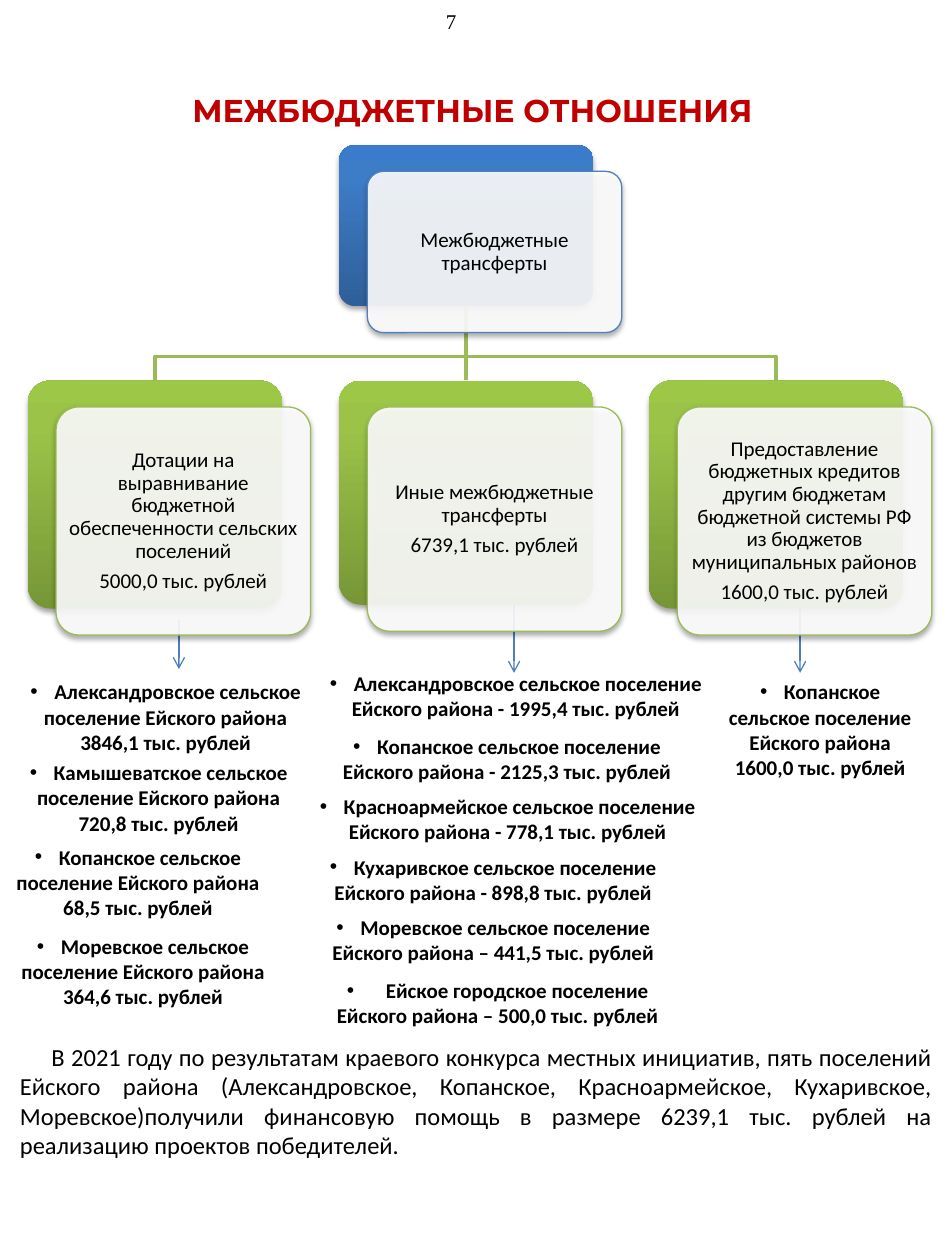
from lxml import etree
from pptx import Presentation
from pptx.dml.color import RGBColor
from pptx.enum.shapes import MSO_CONNECTOR, MSO_SHAPE
from pptx.enum.text import MSO_ANCHOR, MSO_AUTO_SIZE, PP_ALIGN
from pptx.oxml import parse_xml
from pptx.oxml.ns import nsdecls, qn
from pptx.util import Inches, Pt

COLORS = {
    "black": "000000", "white": "FFFFFF", "title": "C00000", "arrow": "4B7EBC",
    "blue": "4F81BD", "green": "9BBB59",
}
GRADIENTS = {
    "blue": ((0, "2F5F99"), (80, "3D7CC7"), (100, "3A7CCB")),
    "green": ((0, "779737"), (80, "9BC348"), (100, "9DC746")),
}
CARD_WIDTH = 2.02
ROW_TOP = 3.02
ROOT = (2.69, 1.15, 1.28, "blue", ["Межбюджетные трансферты"])
BRANCHES = [
    (0.22, ROW_TOP, 1.81, "green",
     ["Дотации на выравнивание бюджетной обеспеченности сельских поселений",
      "5000,0 тыс. рублей"]),
    (2.69, ROW_TOP, 1.78, "green",
     ["Иные межбюджетные трансферты", "6739,1 тыс. рублей"]),
    (5.15, ROW_TOP, 1.81, "green",
     ["Предоставление бюджетных кредитов другим бюджетам бюджетной системы РФ "
      "из бюджетов муниципальных районов", "1600,0 тыс. рублей"]),
]
ARROWS = [(4.08, 4.79, 5.34), (1.42, 4.92, 5.31), (6.35, 4.42, 5.34)]
DISTRICT = "Ейского района"
SETTLEMENT = "поселение Ейского района"
RECIPIENTS = [
    (5.64, 5.34, 1.74, False, 0.19,
     ["Копанское", "сельское поселение", DISTRICT, "1600,0 тыс. рублей"]),
    (-0.05, 5.34, 2.73, True, 0.19,
     ["Александровское сельское", SETTLEMENT, "3846,1 тыс. рублей"]),
    (0.13, 5.98, 2.26, False, 0.19,
     ["Камышеватское сельское", SETTLEMENT, "720,8 тыс. рублей"]),
    (0.02, 6.65, 2.15, False, 0.19,
     ["Копанское сельское", SETTLEMENT, "68,5 тыс. рублей"]),
    (0.04, 7.36, 2.19, False, 0.19,
     ["Моревское сельское", SETTLEMENT, "364,6 тыс. рублей"]),
    (2.22, 5.27, 3.75, True, 0.19,
     ["Александровское сельское поселение", f"{DISTRICT} - 1995,4 тыс. рублей"]),
    (2.15, 5.77, 3.75, True, 0.19,
     ["Копанское сельское поселение", f"{DISTRICT} - 2125,3 тыс. рублей"]),
    (2.41, 6.25, 3.24, False, 0.19,
     ["Красноармейское сельское поселение", f"{DISTRICT} - 778,1 тыс. рублей"]),
    (2.49, 6.73, 2.85, False, 0.19,
     ["Кухаривское сельское поселение", f"{DISTRICT} - 898,8 тыс. рублей"]),
    (2.04, 7.21, 3.75, True, 0.19,
     ["Моревское сельское поселение", f"{DISTRICT} – 441,5 тыс. рублей"]),
    (2.56, 7.71, 2.78, False, 0.31,
     ["Ейское городское поселение", f"{DISTRICT} – 500,0 тыс. рублей"]),
]
SUMMARY = (
    "В 2021 году по результатам краевого конкурса местных инициатив, пять поселений "
    "Ейского района (Александровское, Копанское, Красноармейское, Кухаривское, "
    "Моревское)получили финансовую помощь в размере 6239,1 тыс. рублей на реализацию "
    "проектов победителей."
)


def color(name):
    return RGBColor.from_string(COLORS[name])


def add_text(slide, lines, left, top, width, height, *, size=12, font="Calibri",
             ink="black", bold=False, align=PP_ALIGN.CENTER, wrap=True, bullet=0,
             first_indent=0, card=False):
    box = slide.shapes.add_textbox(*map(Inches, (left, top, width, height)))
    frame = box.text_frame
    frame.word_wrap = wrap
    frame.auto_size = MSO_AUTO_SIZE.NONE if card else MSO_AUTO_SIZE.SHAPE_TO_FIT_TEXT
    if card:
        frame.vertical_anchor = MSO_ANCHOR.MIDDLE
        frame.margin_left = frame.margin_right = Inches(0.05)
        frame.margin_top = frame.margin_bottom = Inches(0.05)
    for index, line in enumerate(lines):
        paragraph = frame.add_paragraph() if index else frame.paragraphs[0]
        paragraph.alignment = align
        if card:
            paragraph.line_spacing = 0.9
            paragraph.space_after = Pt(4.2)
        properties = paragraph._p.get_or_add_pPr()
        if first_indent:
            properties.set("indent", str(Inches(first_indent)))
        if bullet and index == 0:
            properties.set("marL", str(Inches(bullet)))
            properties.set("indent", str(-Inches(bullet)))
            etree.SubElement(properties, qn("a:buFont"), typeface="Arial")
            etree.SubElement(properties, qn("a:buChar"), char="•")
        run = paragraph.add_run()
        run.text = line
        run.font.size = Pt(size)
        run.font.name = font
        run.font.bold = bold
        run.font.color.rgb = color(ink)


def add_plate(slide, left, top, height):
    plate = slide.shapes.add_shape(
        MSO_SHAPE.ROUNDED_RECTANGLE, *map(Inches, (left, top, CARD_WIDTH, height)))
    plate.adjustments[0] = 0.1
    plate.line.fill.background()
    return plate


def add_shadow(shape):
    shape._element.spPr.append(parse_xml(
        f'<a:effectLst {nsdecls("a")}><a:outerShdw blurRad="{Pt(3.1)}" dist="{Pt(1.8)}" '
        f'dir="5400000" rotWithShape="0"><a:srgbClr val="{COLORS["black"]}">'
        '<a:alpha val="35000"/></a:srgbClr></a:outerShdw></a:effectLst>'))


def add_back_plate(slide, left, top, height, theme):
    plate = add_plate(slide, left, top, height)
    stops = "".join(
        f'<a:gs pos="{position * 1000}"><a:srgbClr val="{shade}"/></a:gs>'
        for position, shade in GRADIENTS[theme])
    plate.line._ln.addprevious(parse_xml(
        f'<a:gradFill {nsdecls("a")} rotWithShape="1"><a:gsLst>{stops}</a:gsLst>'
        '<a:lin ang="16200000" scaled="0"/></a:gradFill>'))
    add_shadow(plate)
    return plate


def add_front_plate(slide, left, top, height, theme, lines):
    left, top = left + 0.225, top + 0.21
    plate = add_plate(slide, left, top, height)
    plate.fill.solid()
    plate.fill.fore_color.rgb = color("white")
    fill_color = plate._element.spPr.find(qn("a:solidFill"))[0]
    etree.SubElement(fill_color, qn("a:alpha"), val="90000")
    plate.line.color.rgb = color(theme)
    plate.line.width = Pt(0.75)
    add_shadow(plate)
    add_text(slide, lines, left + 0.05, top + 0.05, CARD_WIDTH - 0.1, height - 0.1, card=True)


def add_line(slide, x, top, bottom, ink, width, arrow=False):
    line = slide.shapes.add_connector(
        MSO_CONNECTOR.STRAIGHT, Inches(x), Inches(top), Inches(x), Inches(bottom))
    line.line.color.rgb = color(ink)
    line.line.width = Pt(width)
    if arrow:
        etree.SubElement(line.line._ln, qn("a:tailEnd"), type="arrow")
    etree.SubElement(line._element.spPr, qn("a:effectLst"))
    return line


def add_elbow(slide, start_x, start_y, end_x, end_y):
    middle = start_y + 0.4
    builder = slide.shapes.build_freeform(Inches(start_x), Inches(start_y))
    builder.add_line_segments(
        [(Inches(x), Inches(y))
         for x, y in ((start_x, middle), (end_x, middle), (end_x, end_y))], close=False)
    elbow = builder.convert_to_shape()
    elbow.shadow.inherit = False
    elbow.fill.background()
    elbow.line.color.rgb = color("green")
    elbow.line.width = Pt(2)


def add_tree(slide):
    cards = [ROOT, *BRANCHES]
    plates = [add_back_plate(slide, *card[:4]) for card in cards]
    root_x, root_bottom = ROOT[0] + CARD_WIDTH / 2, ROOT[1] + ROOT[2]
    for branch, plate in zip(BRANCHES, plates[1:]):
        branch_x = branch[0] + CARD_WIDTH / 2
        if branch_x == root_x:
            trunk = add_line(slide, root_x, root_bottom, ROW_TOP, "green", 2)
            trunk.begin_connect(plates[0], 2)
            trunk.end_connect(plate, 0)
        else:
            add_elbow(slide, root_x, root_bottom, branch_x, ROW_TOP)
    for card in cards:
        add_front_plate(slide, *card)


def main():
    presentation = Presentation()
    presentation.slide_width, presentation.slide_height = Inches(7.5), Inches(10)
    slide = presentation.slides.add_slide(presentation.slide_layouts[6])

    for x, top, bottom in ARROWS:
        add_line(slide, x, top, bottom, "arrow", 0.75, arrow=True)
    add_text(slide, ["7"], 3.44, 0.02, 0.29, 0.3, font="Times New Roman", wrap=False,
             align=PP_ALIGN.LEFT)
    add_text(slide, ["МЕЖБЮДЖЕТНЫЕ ОТНОШЕНИЯ"], 0.13, 0.67, 7.24, 0.4, size=18,
             font="Montserrat", ink="title", bold=True)
    add_tree(slide)
    for left, top, width, wrap, bullet, lines in RECIPIENTS:
        add_text(slide, lines, left, top, width, 0.1 + 0.2 * len(lines), bold=True,
                 wrap=wrap, bullet=bullet)
    add_text(slide, [SUMMARY], 0.06, 8.22, 7.44, 1.04, size=14, align=PP_ALIGN.JUSTIFY,
             first_indent=0.25)

    presentation.save("out.pptx")


if __name__ == "__main__":
    main()
